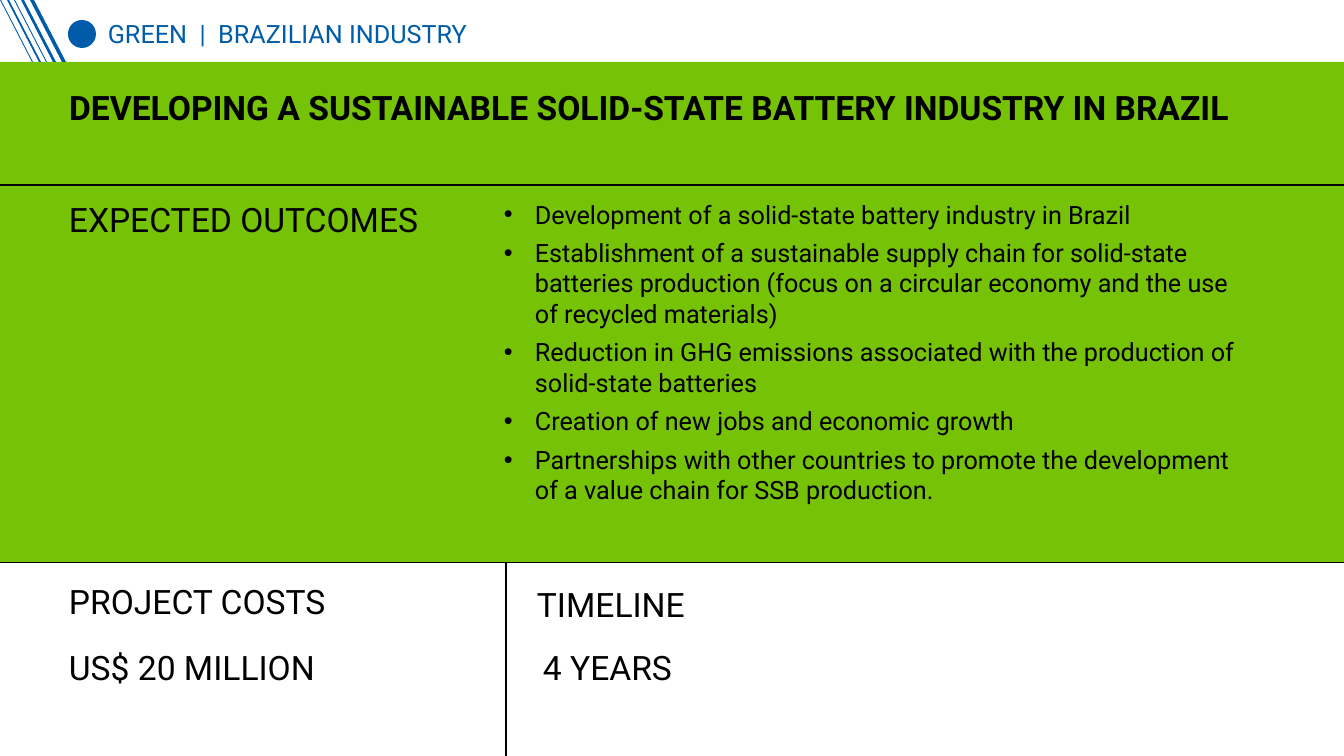
from dataclasses import dataclass
from typing import Any

from lxml.etree import SubElement
from pptx import Presentation
from pptx.dml.color import RGBColor
from pptx.enum.shapes import MSO_CONNECTOR, MSO_SHAPE
from pptx.enum.text import MSO_ANCHOR, MSO_AUTO_SIZE, PP_ALIGN
from pptx.oxml.ns import qn
from pptx.util import Emu, Pt

WIDTH, HEIGHT = 1344, 756
SCALE = 12192000 / WIDTH
BAND_TOP, RULE_TOP, COSTS_TOP, COLUMN = 62, 185, 563, 506
STRIPES = [(0, 1), (7, 2), (14, 1), (21, 3), (30, 4)]
STRIPE_SLANT = 32

OUTCOMES = [
    "Development of a solid-state battery industry in Brazil",
    "Establishment of a sustainable supply chain for solid-state batteries production "
    "(focus on a circular economy and the use of recycled materials)",
    "Reduction in GHG emissions associated with the production of solid-state batteries",
    "Creation of new jobs and economic growth",
    "Partnerships with other countries to promote the development of a value chain "
    "for SSB production.",
]
LABELS = [
    ("EXPECTED OUTCOMES", 59, 194, 398),
    ("PROJECT COSTS", 59, 576, 398),
    ("TIMELINE", 527, 579, 398),
    ("US$ 20 MILLION", 59, 642, 341),
    ("4 YEARS", 533, 642, 341),
]


def px(length):
    return Emu(round(length * SCALE))


def colour(value):
    return RGBColor.from_string(value)


@dataclass
class Painter:
    """Draws the elements of one page in a shared style."""

    page: Any
    font: str = "Roboto"
    ink: str = "000000"
    blue: str = "005CA9"
    green: str = "76C206"
    white: str = "FFFFFF"

    def paint(self, shape, fill):
        shape.shadow.inherit = False
        shape.fill.solid()
        shape.fill.fore_color.rgb = colour(fill)
        shape.line.fill.background()

    def shape(self, kind, left, top, width, height, fill):
        shape = self.page.shapes.add_shape(kind, px(left), px(top), px(width), px(height))
        self.paint(shape, fill)

    def stripes(self):
        builder = self.page.shapes.build_freeform(0, 0, scale=SCALE)
        for left, width in STRIPES:
            foot = left + STRIPE_SLANT
            builder.move_to(left, 0)
            builder.add_line_segments(
                [(foot, BAND_TOP), (foot + width, BAND_TOP), (left + width, 0)], close=True
            )
        self.paint(builder.convert_to_shape(), self.blue)

    def line(self, start, end, weight):
        line = self.page.shapes.add_connector(
            MSO_CONNECTOR.STRAIGHT, *map(px, start), *map(px, end)
        )
        line.line.color.rgb = colour(self.ink)
        line.line.width = Pt(weight)
        SubElement(line._element.spPr, qn("a:effectLst"))

    def set_text(self, frame, lines, size, ink, bold=False):
        frame.word_wrap = True
        frame.auto_size = MSO_AUTO_SIZE.SHAPE_TO_FIT_TEXT
        frame.vertical_anchor = MSO_ANCHOR.TOP
        frame.text = "\n".join(lines)
        for para in frame.paragraphs:
            para.alignment = PP_ALIGN.LEFT
            para.font.name = self.font
            para.font.size = Pt(size)
            para.font.bold = bold
            para.font.color.rgb = colour(ink)

    def text(self, lines, left, top, width, height, size, ink=None):
        box = self.page.shapes.add_textbox(px(left), px(top), px(width), px(height))
        self.set_text(box.text_frame, lines, size, ink or self.ink)
        return box.text_frame

    def bullets(self, lines, left, top, width, height, size, indent):
        frame = self.text(lines, left, top, width, height, size)
        for para in frame.paragraphs:
            para.space_before = Pt(6)
            properties = para._p.get_or_add_pPr()
            properties.set("marL", str(px(indent)))
            properties.set("indent", str(-px(indent)))
            marker_font = properties.makeelement(qn("a:buFont"), {"typeface": "Arial"})
            marker = properties.makeelement(qn("a:buChar"), {"char": "•"})
            settings = properties.find(qn("a:defRPr"))
            settings.addprevious(marker_font)
            settings.addprevious(marker)

    def title(self, words, left, top, width, height, size):
        title = self.page.shapes.title
        title.left, title.top = px(left), px(top)
        title.width, title.height = px(width), px(height)
        self.set_text(title.text_frame, [words], size, self.ink, bold=True)
        para = title.text_frame.paragraphs[0]
        para.line_spacing = 1.07
        para.space_after = Pt(8)
        self.page.shapes._spTree.append(title._element)


def main():
    deck = Presentation()
    deck.slide_width, deck.slide_height = px(WIDTH), px(HEIGHT)
    painter = Painter(deck.slides.add_slide(deck.slide_layouts[5]))

    painter.shape(MSO_SHAPE.RECTANGLE, 0, BAND_TOP, WIDTH, HEIGHT - BAND_TOP, painter.green)
    painter.text(["GREEN  |  BRAZILIAN INDUSTRY"], 98, 13, 721, 40, 18, painter.blue)
    painter.stripes()
    painter.shape(MSO_SHAPE.OVAL, 68, 20, 28, 28, painter.blue)
    painter.shape(MSO_SHAPE.RECTANGLE, 0, COSTS_TOP, WIDTH, HEIGHT - COSTS_TOP, painter.white)
    painter.line((0, RULE_TOP), (WIDTH, RULE_TOP), 1.5)
    painter.line((0, COSTS_TOP), (WIDTH, COSTS_TOP), 0.75)
    painter.line((COLUMN, HEIGHT), (COLUMN, COSTS_TOP), 1.5)
    for words, left, top, width in LABELS:
        painter.text([words], left, top, width, 50, 24)
    painter.bullets(OUTCOMES, 494, 194, 762, 319, 18, 31)
    painter.title(
        "DEVELOPING A SUSTAINABLE SOLID-STATE BATTERY INDUSTRY IN BRAZIL", 59, 79, 1247, 51, 24
    )
    deck.save("out.pptx")


if __name__ == "__main__":
    main()
